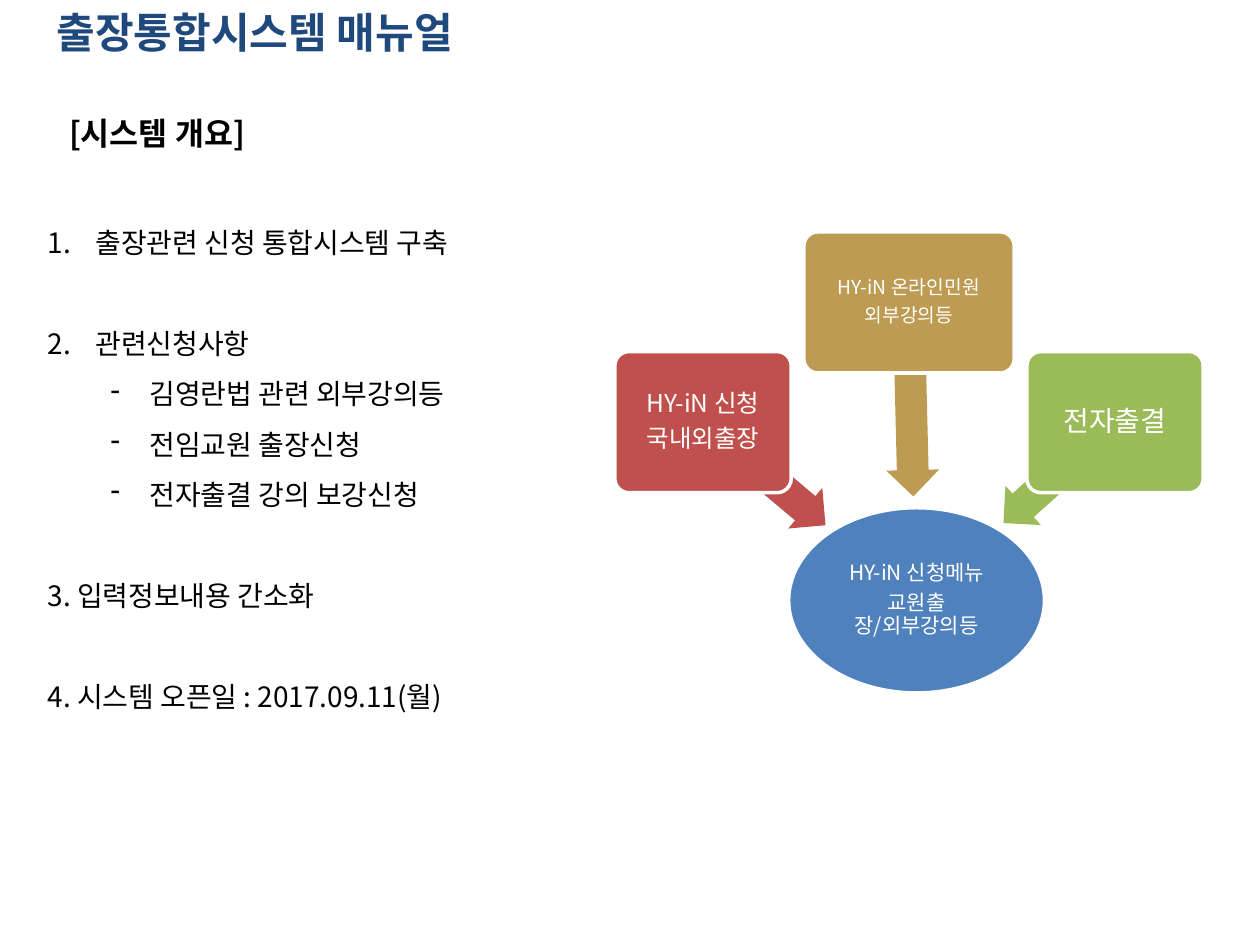
from pptx import Presentation
from pptx.dml.color import RGBColor
from pptx.enum.shapes import MSO_SHAPE
from pptx.enum.text import MSO_ANCHOR, PP_ALIGN
from pptx.oxml.ns import qn
from pptx.util import Inches, Pt
from lxml import etree

ROUND, OVAL, ARROW = MSO_SHAPE.ROUNDED_RECTANGLE, MSO_SHAPE.OVAL, MSO_SHAPE.LEFT_ARROW
TOP, MIDDLE = MSO_ANCHOR.TOP, MSO_ANCHOR.MIDDLE
LEFT, CENTER = PP_ALIGN.LEFT, PP_ALIGN.CENTER

FONT = "Noto Sans CJK KR"
NAVY = RGBColor(0x1F, 0x49, 0x7D)
BLACK = RGBColor(0, 0, 0)
WHITE = RGBColor(0xFF, 0xFF, 0xFF)
BLUE = RGBColor(0x4F, 0x81, 0xBD)
RED = RGBColor(0xC0, 0x50, 0x4D)
GOLD = RGBColor(0xBD, 0x9B, 0x53)
GREEN = RGBColor(0x9B, 0xBB, 0x59)

TITLE = "출장통합시스템 매뉴얼"
HEADING = "[시스템 개요]"
# text, style, starts a new group
ITEMS = [
    ("출장관련 신청 통합시스템 구축", "number", False),
    ("관련신청사항", "number", True),
    ("김영란법 관련 외부강의등", "dash", False),
    ("전임교원 출장신청", "dash", False),
    ("전자출결 강의 보강신청", "dash", False),
    ("3. 입력정보내용 간소화", "plain", True),
    ("4. 시스템 오픈일 : 2017.09.11(월)", "plain", True),
]
# style: level, left margin, hanging indent, bullet tag, bullet attributes
STYLES = {
    "number": (0, 0.38, 0.38, "a:buAutoNum", {"type": "arabicPeriod"}),
    "dash": (1, 0.81, 0.31, "a:buChar", {"char": "-"}),
    "plain": (0, 0, 0, "a:buNone", {}),
}
HUB = ("HY-iN 신청메뉴\n교원출장/외부강의등", 12, BLUE, (6.26, 4.03, 2.03, 1.47), 0.01)
# text, size, colour, box, inset, arrow box, arrow angle
SOURCES = [
    ("HY-iN 신청\n국내외출장", 14, RED, (4.88, 2.79, 1.4, 1.12), 0.03,
     (5.43, 3.55, 1.27, 0.42), 220),
    ("HY-iN 온라인민원\n외부강의등", 11, GOLD, (6.38, 1.84, 1.67, 1.12), 0.02,
     (6.46, 2.96, 1.54, 0.42), 268.6),
    ("전자출결", 16, GREEN, (8.15, 2.79, 1.4, 1.12), 0.03,
     (7.81, 3.54, 1.2, 0.42), 318),
]


def place(box):
    return [Inches(n) for n in box]


def style(para, size, color, bold=False):
    for run in para.runs:
        font = run.font
        font.name, font.size, font.bold = FONT, Pt(size), bold
        font.color.rgb = color
        etree.SubElement(run._r.get_or_add_rPr(), qn("a:ea"), typeface=FONT)


def add_shape(slide, kind, box, color):
    shape = slide.shapes.add_shape(kind, *place(box))
    shape.shadow.inherit = False
    shape.fill.solid()
    shape.fill.fore_color.rgb = color
    return shape


def add_node(slide, kind, text, size, color, box, inset):
    node = add_shape(slide, kind, box, color)
    node.line.color.rgb = WHITE
    node.line.width = Pt(2)
    if kind == ROUND:
        node.adjustments[0] = 0.1
    frame = node.text_frame
    frame.text = text
    frame.word_wrap = True
    frame.vertical_anchor = MIDDLE
    frame.margin_left = frame.margin_right = Inches(inset)
    frame.margin_top = frame.margin_bottom = Inches(inset)
    for para in frame.paragraphs:
        para.alignment = CENTER
        para.line_spacing = 0.9
        para.space_after = Pt(round(size * 0.35, 1))
        style(para, size, WHITE)


def add_arrow(slide, box, color, angle):
    arrow = add_shape(slide, ARROW, box, color)
    arrow.line.fill.background()
    arrow.adjustments[0], arrow.adjustments[1] = 0.6, 0.5
    arrow.rotation = angle


def add_list(slide):
    frame = slide.shapes.add_textbox(*place((0.28, 1.61, 4.4, 4.14))).text_frame
    frame.word_wrap = True
    frame.text = "\n".join(text for text, _, _ in ITEMS)
    for para, (_, name, gap) in zip(frame.paragraphs, ITEMS):
        level, left, hang, tag, attrs = STYLES[name]
        para.level = level
        para.line_spacing = 1.5
        if gap:
            para.space_before = Pt(28.8)
        props = para._p.get_or_add_pPr()
        props.set("marL", str(Inches(left)))
        props.set("indent", str(-Inches(hang)))
        etree.SubElement(props, qn(tag), attrs)
        style(para, 16, BLACK)


def main():
    deck = Presentation()
    deck.slide_width, deck.slide_height = Inches(10), Inches(7.5)
    slide = deck.slides.add_slide(deck.slide_layouts[5])

    title = slide.shapes.title
    title.left, title.top, title.width, title.height = place((0.35, 0, 4.49, 0.5))
    title.text_frame.text = TITLE
    title.text_frame.vertical_anchor = TOP
    title.text_frame.paragraphs[0].alignment = LEFT
    style(title.text_frame.paragraphs[0], 24, NAVY, True)

    head = slide.shapes.add_textbox(*place((0.45, 0.86, 1.74, 0.4))).text_frame
    head.text = HEADING
    head.word_wrap = False
    style(head.paragraphs[0], 18, BLACK, True)

    add_list(slide)
    add_node(slide, OVAL, *HUB)
    for text, size, color, box, inset, path_box, angle in SOURCES:
        add_arrow(slide, path_box, color, angle)
        add_node(slide, ROUND, text, size, color, box, inset)

    deck.save("out.pptx")


if __name__ == "__main__":
    main()
